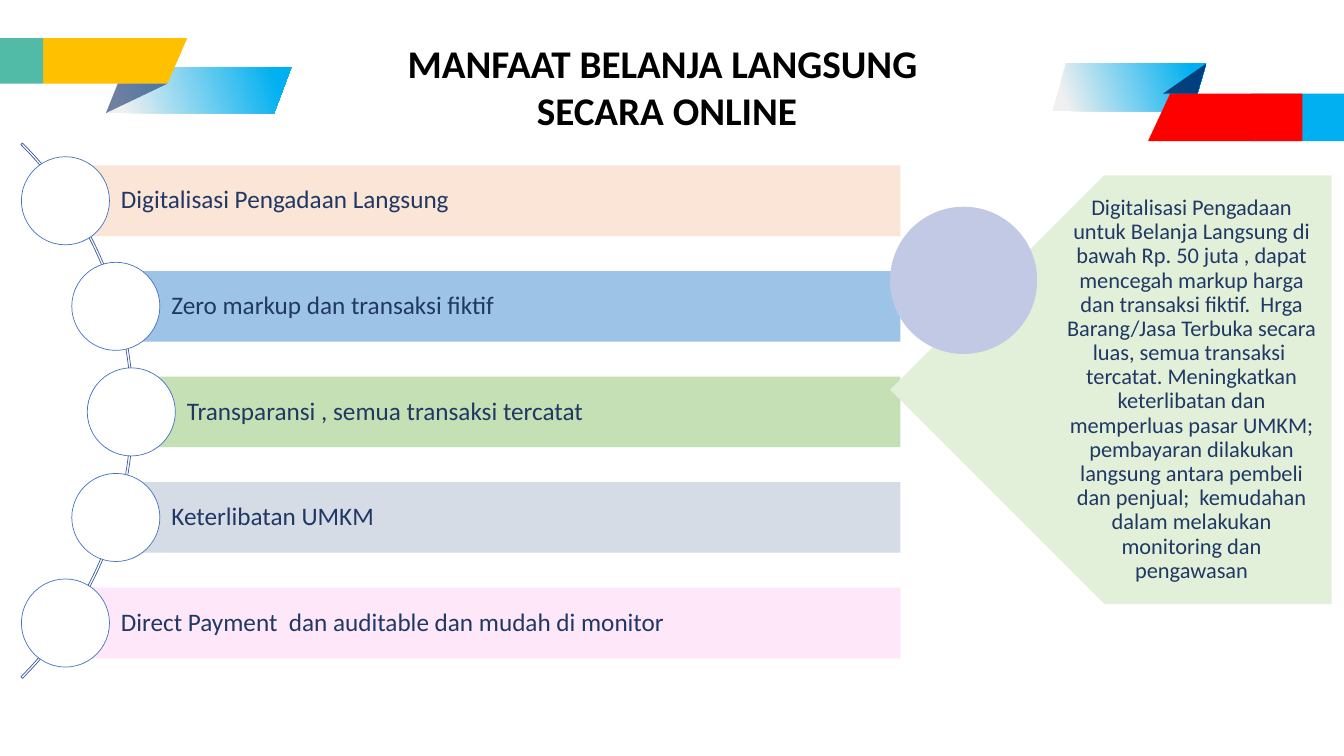
import pptx
import pptx.dml.color
import pptx.enum.shapes
import pptx.enum.text
import pptx.oxml
import pptx.oxml.ns
import pptx.util

Cm = pptx.util.Cm
SHAPES = pptx.enum.shapes.MSO_SHAPE
ALIGN = pptx.enum.text.PP_ALIGN
ANCHOR = pptx.enum.text.MSO_ANCHOR

COLORS = {
    "black": "000000", "white": "FFFFFF", "text": "203864",
    "arc": "365B9D", "ring": "4472C4", "peach": "FBE5D6",
    "blue": "9DC3E6", "green": "C5E0B4", "grey": "D6DCE5",
    "pink": "FDE7F9", "panel": "E2F0D9", "lavender": "C1C9E4",
    "sky": "00B0F0", "mist": "F0F0F0", "red": "FF0000",
    "navy": "002060", "amber": "FFC000", "teal": "51BBA8",
}

BENEFITS = [
    ("Digitalisasi Pengadaan Langsung", 1.65, "peach"),
    ("Zero markup dan transaksi fiktif", 2.92, "blue"),
    ("Transparansi , semua transaksi tercatat", 3.31, "green"),
    ("Keterlibatan UMKM", 2.92, "grey"),
    ("Direct Payment  dan auditable dan mudah di monitor", 1.65, "pink"),
]
BAR_TOP, BAR_PITCH, BAR_HEIGHT, BAR_RIGHT = 4.17, 2.66, 1.78, 22.69
RING = 2.22

SUMMARY = (
    "Digitalisasi Pengadaan untuk Belanja Langsung di bawah Rp. 50 juta , "
    "dapat mencegah markup harga dan transaksi fiktif.  Hrga Barang/Jasa "
    "Terbuka secara luas, semua transaksi  tercatat. Meningkatkan "
    "keterlibatan dan memperluas pasar UMKM; pembayaran dilakukan langsung "
    "antara pembeli dan penjual;  kemudahan dalam melakukan monitoring dan "
    "pengawasan"
)


class SlideBuilder:
    """Holds the style and the current slide, and adds its elements."""

    font = "Calibri"

    def __init__(self, presentation):
        self.slide = presentation.slides.add_slide(presentation.slide_layouts[5])

    def color(self, name):
        return pptx.dml.color.RGBColor.from_string(COLORS[name])

    def paint(self, shape, fill=None, line=None):
        shape.shadow.inherit = False
        if fill:
            shape.fill.solid()
            shape.fill.fore_color.rgb = self.color(fill)
        else:
            shape.fill.background()
        if line:
            shape.line.color.rgb = self.color(line)
            shape.line.width = pptx.util.Pt(0.5)
        else:
            shape.line.fill.background()

    def shape(self, kind, left, top, width, height, fill=None, line=None):
        shape = self.slide.shapes.add_shape(
            kind, Cm(left), Cm(top), Cm(width), Cm(height))
        self.paint(shape, fill, line)
        return shape

    def polygon(self, points, fill, opacity=None):
        start, *others = [(Cm(x), Cm(y)) for x, y in points]
        builder = self.slide.shapes.build_freeform(*start)
        builder.add_line_segments(others, close=True)
        shape = builder.convert_to_shape()
        self.paint(shape, fill)
        if opacity:
            color = shape.element.spPr.find(".//" + pptx.oxml.ns.qn("a:srgbClr"))
            color.append(pptx.oxml.parse_xml(
                f'<a:alpha {pptx.oxml.ns.nsdecls("a")} val="{opacity * 1000}"/>'))
        return shape

    def gradient_polygon(self, points):
        shape = self.polygon(points, "sky")
        shape.fill.gradient()
        shape.fill.gradient_angle = 19
        stops = zip(shape.fill.gradient_stops, ("mist", "sky"), (0.09, 0.91))
        for stop, name, position in stops:
            stop.color.rgb = self.color(name)
            stop.position = position

    def set_text(self, shape, text, size, color, insets, align=ALIGN.LEFT,
                 anchor=ANCHOR.MIDDLE, spacing=0.9, bold=False):
        frame = shape.text_frame
        frame.text = text
        frame.word_wrap = True
        frame.auto_size = pptx.enum.text.MSO_AUTO_SIZE.NONE
        frame.vertical_anchor = anchor
        (frame.margin_left, frame.margin_top,
         frame.margin_right, frame.margin_bottom) = map(Cm, insets)
        for paragraph in frame.paragraphs:
            paragraph.alignment = align
            paragraph.line_spacing = spacing
            for run in paragraph.runs:
                run.font.name = self.font
                run.font.size = pptx.util.Pt(size)
                run.font.bold = bold
                run.font.color.rgb = self.color(color)

    def title(self, text, left, top, width, height):
        title = self.slide.shapes.title
        title.left, title.top = Cm(left), Cm(top)
        title.width, title.height = Cm(width), Cm(height)
        self.set_text(title, text, 28, "black", (0.25, 0.13, 0.25, 0.13),
                      ALIGN.CENTER, ANCHOR.TOP, 1.0, True)

    def arc(self, left, top, size):
        arc = self.shape(SHAPES.BLOCK_ARC, left, top, size, size, line="arc")
        for index, value in enumerate((189, 27, 0.003)):
            arc.adjustments[index] = value

    def benefit(self, index, text, left, fill):
        top = BAR_TOP + index * BAR_PITCH
        bar = self.shape(SHAPES.RECTANGLE, left, top, BAR_RIGHT - left,
                         BAR_HEIGHT, fill)
        self.set_text(bar, text, 18, "text", (1.4, 0.13, 0.13, 0.13))
        self.shape(SHAPES.OVAL, left - RING / 2, top + (BAR_HEIGHT - RING) / 2,
                   RING, RING, "white", "ring")

    def summary(self, text):
        arrow = self.shape(SHAPES.PENTAGON, 22.43, 4.42, 11.13, 10.8, "panel")
        arrow.rotation = 180
        box = self.slide.shapes.add_textbox(Cm(25.15), Cm(4.42), Cm(8.41), Cm(10.8))
        self.set_text(box, text, 16, "text", (1.65, 0.18, 0.3, 0.18), ALIGN.CENTER)
        self.shape(SHAPES.OVAL, 22.43, 5.21, 3.71, 3.71, "lavender")

    def right_ribbon(self):
        self.shape(SHAPES.RECTANGLE, 31.52, 2.36, 2.35, 1.2, "sky")
        self.gradient_polygon(
            [(26.87, 1.6), (26.52, 2.8), (30.05, 2.8), (30.4, 1.6)])
        self.polygon(
            [(29.49, 2.36), (32.82, 2.36), (32.82, 3.56), (28.93, 3.56)], "red")
        self.polygon([(29.31, 2.36), (30.18, 2.36), (30.4, 1.6)], "navy", 79)

    def left_ribbon(self):
        self.gradient_polygon(
            [(6.91, 2.85), (7.34, 1.7), (3.1, 1.7), (2.67, 2.85)])
        self.polygon(
            [(4.22, 2.11), (1.09, 2.11), (1.09, 0.96), (4.72, 0.96)], "amber")
        self.shape(SHAPES.RECTANGLE, 0, 0.96, 1.09, 1.15, "teal")
        self.polygon([(4.22, 2.11), (2.97, 2.11), (2.67, 2.85)], "navy", 54)


def main():
    presentation = pptx.Presentation()
    presentation.slide_width, presentation.slide_height = Cm(33.87), Cm(19.05)
    builder = SlideBuilder(presentation)
    builder.title("MANFAAT BELANJA LANGSUNG \nSECARA ONLINE", 7.52, 0.86, 18.57, 2.64)
    builder.arc(-15.72, 0.81, 19.08)
    for index, benefit in enumerate(BENEFITS):
        builder.benefit(index, *benefit)
    builder.summary(SUMMARY)
    builder.right_ribbon()
    builder.left_ribbon()
    presentation.save("out.pptx")


if __name__ == "__main__":
    main()
